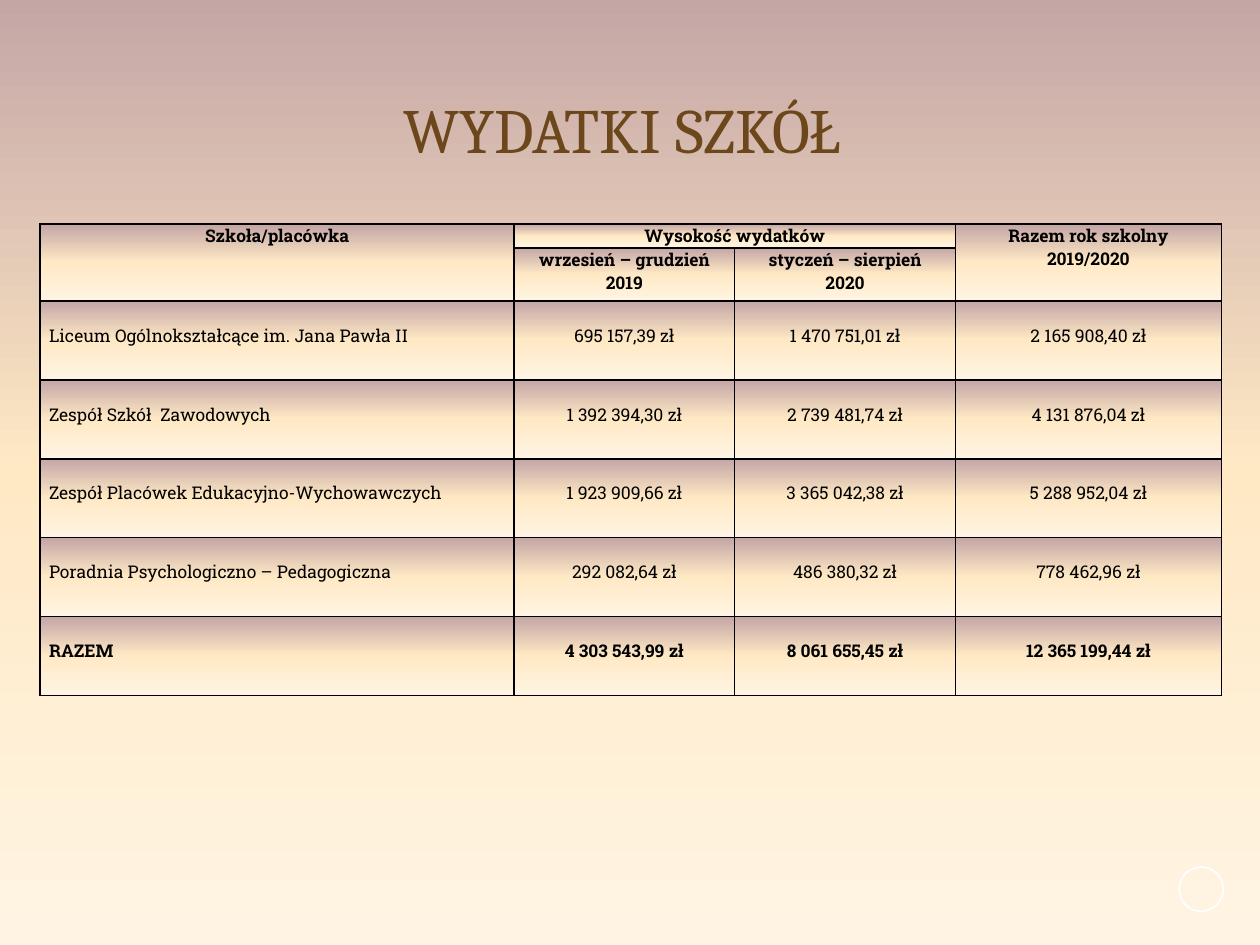
from lxml import etree
from pptx import Presentation
from pptx.dml.color import RGBColor
from pptx.enum.shapes import MSO_SHAPE
from pptx.enum.text import MSO_ANCHOR, PP_ALIGN
from pptx.oxml.ns import qn
from pptx.util import Cm, Pt

LEFT, CENTER = PP_ALIGN.LEFT, PP_ALIGN.CENTER
MIDDLE = MSO_ANCHOR.MIDDLE
ELLIPSE = MSO_SHAPE.OVAL
TITLE_ONLY = 5

TITLE_FONT, TABLE_FONT = "Cambria", "Roboto Slab"
GRADIENT = [(0, "C4A6A6"), (50, "FFE9C5"), (100, "FFF4E3")]
BLACK, WHITE, BROWN = "000000", "FFFFFF", "6B471B"

COLUMN_WIDTHS = [9.55, 4.45, 4.45, 5.36]
ROW_HEIGHTS = [0.48, 1.07] + [1.59] * 5
HEADERS = [
    (0, 0, 1, 0, ["Szkoła/placówka"]),
    (0, 1, 0, 2, ["Wysokość wydatków"]),
    (0, 3, 1, 3, ["Razem rok szkolny", "2019/2020"]),
    (1, 1, 1, 1, ["wrzesień – grudzień", "2019"]),
    (1, 2, 1, 2, ["styczeń – sierpień", "2020"]),
]
EXPENSES = [
    ("Liceum Ogólnokształcące im. Jana Pawła II",
     "695 157,39 zł", "1 470 751,01 zł", "2 165 908,40 zł"),
    ("Zespół Szkół  Zawodowych",
     "1 392 394,30 zł", "2 739 481,74 zł", "4 131 876,04 zł"),
    ("Zespół Placówek Edukacyjno-Wychowawczych",
     "1 923 909,66 zł", "3 365 042,38 zł", "5 288 952,04 zł"),
    ("Poradnia Psychologiczno – Pedagogiczna",
     "292 082,64 zł", "486 380,32 zł", "778 462,96 zł"),
    ("RAZEM", "4 303 543,99 zł", "8 061 655,45 zł", "12 365 199,44 zł"),
]


def color(value):
    """Turn a hex string into a colour."""
    return RGBColor.from_string(value)


def set_gradient(fill, element):
    """Give the fill held by the element the vertical three-stop gradient."""
    fill.gradient()
    fill.gradient_angle = 270
    stops = next(element.iter(qn("a:gsLst")))
    for stop in list(stops):
        stops.remove(stop)
    for position, value in GRADIENT:
        stop = etree.SubElement(stops, qn("a:gs"), pos=str(position * 1000))
        etree.SubElement(stop, qn("a:srgbClr"), val=value)


def set_borders(cell):
    """Draw a thin black line on each side of a cell."""
    properties = cell._tc.get_or_add_tcPr()
    for side in ("a:lnL", "a:lnR", "a:lnT", "a:lnB"):
        line = etree.SubElement(properties, qn(side), w=str(Pt(1)))
        fill = etree.SubElement(line, qn("a:solidFill"))
        etree.SubElement(fill, qn("a:srgbClr"), val=BLACK)


def add_run(paragraph, text, font_name, size, value, bold=False):
    """Add one formatted run to a paragraph."""
    run = paragraph.add_run()
    run.text = text
    run.font.name = font_name
    run.font.size = Pt(size)
    run.font.bold = bold
    run.font.color.rgb = color(value)


def write_cell(cell, lines, alignment, bold, top=0):
    """Write lines of text into a cell, starting below its top margin."""
    cell.margin_left = cell.margin_right = Cm(0.18)
    cell.margin_top, cell.margin_bottom = Cm(top), 0
    frame = cell.text_frame
    for index, line in enumerate(lines):
        paragraph = frame.add_paragraph() if index else frame.paragraphs[0]
        paragraph.alignment = alignment
        add_run(paragraph, line, TABLE_FONT, 10, BLACK, bold)


def add_title(slide, left, top, width, height):
    """Place the slide title in its box."""
    title = slide.shapes.title
    title.left, title.top = Cm(left), Cm(top)
    title.width, title.height = Cm(width), Cm(height)
    title.text_frame.vertical_anchor = MIDDLE
    paragraph = title.text_frame.paragraphs[0]
    paragraph.alignment = CENTER
    paragraph.line_spacing = 0.9
    add_run(paragraph, "WYDATKI SZKÓŁ", TITLE_FONT, 36, BROWN)


def add_expense_table(slide, left, top):
    """Place the table of school expenses at the given corner."""
    table = slide.shapes.add_table(
        len(ROW_HEIGHTS), len(COLUMN_WIDTHS), Cm(left), Cm(top),
        Cm(sum(COLUMN_WIDTHS)), Cm(sum(ROW_HEIGHTS))).table
    for column, width in zip(table.columns, COLUMN_WIDTHS):
        column.width = Cm(width)
    for row, height in zip(table.rows, ROW_HEIGHTS):
        row.height = Cm(height)
    for cell in table.iter_cells():
        set_borders(cell)
        set_gradient(cell.fill, cell._tc)
    for row, column, last_row, last_column, lines in HEADERS:
        cell = table.cell(row, column)
        if (row, column) != (last_row, last_column):
            cell.merge(table.cell(last_row, last_column))
        write_cell(cell, lines, CENTER, True)
    for row, values in enumerate(EXPENSES, start=2):
        is_total = row == len(ROW_HEIGHTS) - 1
        for column, value in enumerate(values):
            alignment = CENTER if column else LEFT
            write_cell(table.cell(row, column), [value], alignment, is_total, top=0.46)


def add_number_ring(slide, left, top, size):
    """Draw the white ring in the corner of the slide."""
    ring = slide.shapes.add_shape(ELLIPSE, Cm(left), Cm(top), Cm(size), Cm(size))
    ring.shadow.inherit = False
    ring.fill.background()
    ring.line.color.rgb = color(WHITE)
    ring.line.width = Pt(1)


def main():
    """Build and save the presentation."""
    presentation = Presentation()
    presentation.slide_width, presentation.slide_height = Cm(25.4), Cm(19.05)
    slide = presentation.slides.add_slide(presentation.slide_layouts[TITLE_ONLY])
    set_gradient(slide.background.fill, slide.element)
    add_number_ring(slide, 23.77, 17.48, 0.89)
    add_title(slide, 0.51, 1.52, 24.13, 2.34)
    add_expense_table(slide, 0.81, 4.52)
    presentation.save("out.pptx")


if __name__ == "__main__":
    main()
